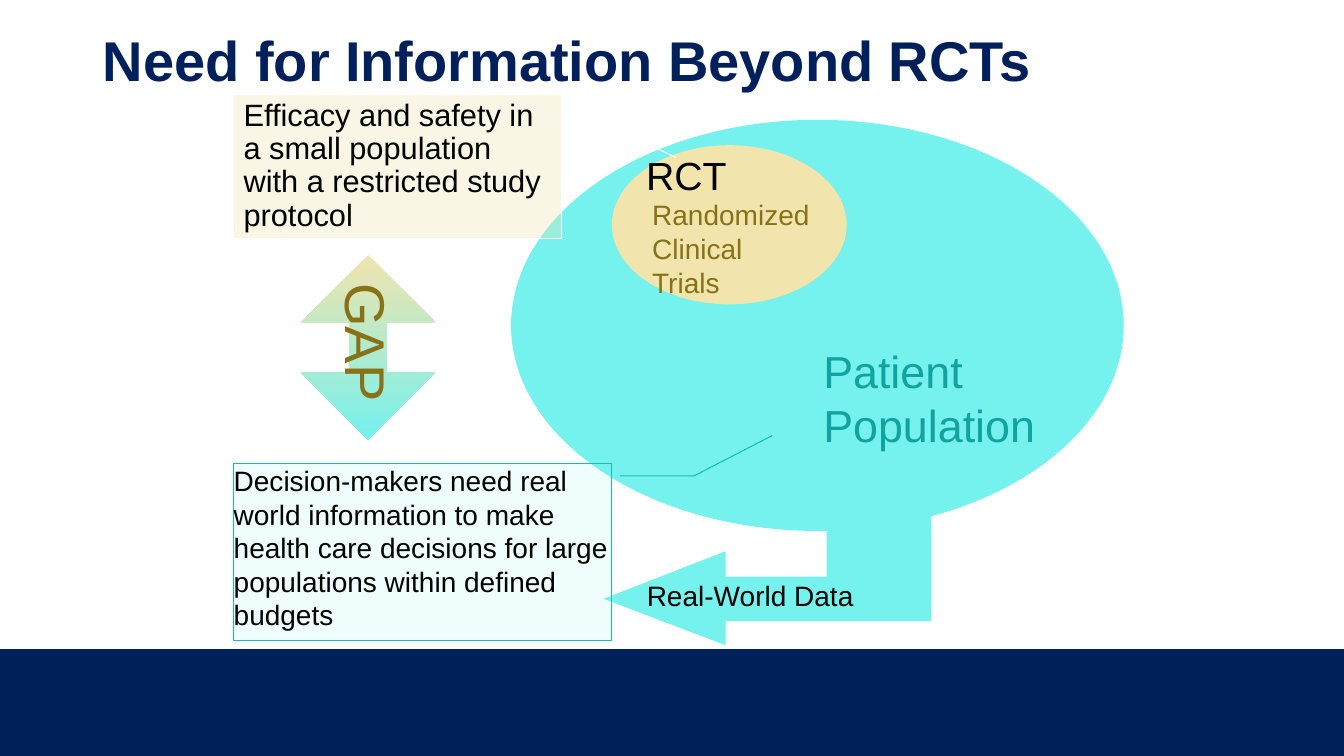
from lxml.etree import SubElement
from pptx import Presentation
from pptx.dml.color import RGBColor
from pptx.enum.shapes import MSO_SHAPE
from pptx.enum.text import MSO_ANCHOR, PP_ALIGN
from pptx.oxml.ns import qn
from pptx.util import Cm, Pt

NAVY, CYAN, SAND, OCHRE, TEAL, BLACK = "00205B", "75F1EE", "F1E4AD", "877217", "11A3A0", "000000"


def style(item, color):
    item.solid()
    item.fore_color.rgb = RGBColor.from_string(color)


def write(shape, text, size, color, spacing=1.0, wrap=True, anchor=MSO_ANCHOR.TOP):
    frame = shape.text_frame
    frame.text = text
    frame.word_wrap = wrap
    frame.vertical_anchor = anchor
    para = frame.paragraphs[0]
    para.alignment = PP_ALIGN.LEFT
    para.line_spacing = spacing
    span = para.runs[0]
    span.font.name = "Arial"
    span.font.size = Pt(size)
    style(span.font.fill, color)
    return para


deck = Presentation()
deck.slide_width, deck.slide_height = Cm(33.87), Cm(19.05)
page = deck.slides.add_slide(deck.slide_layouts[5])
shapes = page.shapes

title = shapes.title
title.left, title.top, title.width, title.height = Cm(2.34), Cm(0.69), Cm(29.21), Cm(1.8)
write(title, "Need for Information Beyond RCTs", 40, NAVY, 0.9, anchor=MSO_ANCHOR.MIDDLE)
title.text_frame.paragraphs[0].runs[0].font.bold = True

outline = shapes.build_freeform(1521, 1509, scale=Cm(0.01))
outline.add_line_segments([
    (1829, 1389), (1829, 1453), (2083, 1453), (2083, 1214),
    (2347, 1214), (2347, 1565), (1829, 1565), (1829, 1626),
])
data_arrow = outline.convert_to_shape()
footer = shapes.add_shape(MSO_SHAPE.RECTANGLE, 0, Cm(16.36), Cm(33.87), Cm(2.69))
population = shapes.add_shape(MSO_SHAPE.OVAL, Cm(12.88), Cm(3.02), Cm(15.44), Cm(10.36))
trials = shapes.add_shape(MSO_SHAPE.OVAL, Cm(15.42), Cm(3.66), Cm(5.92), Cm(4.01))
for shape, color in [(data_arrow, CYAN), (footer, NAVY), (population, CYAN), (trials, SAND)]:
    style(shape.fill, color)
    shape.line.fill.background()
    shape.shadow.inherit = False

para = write(trials, "RCT ", 28, BLACK, anchor=MSO_ANCHOR.MIDDLE)
span = para.add_run()
span.text = "Randomized Clinical Trials"
span.font.name = "Arial"
span.font.size = Pt(20)
style(span.font.fill, OCHRE)
properties = para._p.get_or_add_pPr()
properties.set("marL", str(Cm(0.15)))
properties.set("indent", str(-Cm(0.15)))

callouts = [
    ("Efficacy and safety in a small population with a restricted study protocol",
     (5.89, 2.39, 8.26, 3.63), (0.087, 1.026, 0.087, 1.026, 0.434, 1.348),
     SAND, 30, "FFFFFF", 22, 0.9),
    ("Decision-makers need real world information to make health care decisions "
     "for large populations within defined budgets",
     (5.89, 11.68, 9.53, 4.45), (0.071, 1.022, 0.071, 1.217, -0.158, 1.424),
     CYAN, 10, "13BDB9", 20, 1.0),
]
callout_boxes = []
for text, place, leader, color, opacity, edge, size, spacing in callouts:
    box = shapes.add_shape(MSO_SHAPE.LINE_CALLOUT_2, *map(Cm, place))
    for index, value in enumerate(leader):
        box.adjustments[index] = value
    style(box.fill, color)
    tint = box._element.xpath("p:spPr/a:solidFill/a:srgbClr")[0]
    SubElement(tint, qn("a:alpha")).set("val", str(opacity * 1000))
    style(box.line.fill, edge)
    box.line.width = Pt(0.75)
    box.shadow.inherit = False
    write(box, text, size, BLACK, spacing)
    callout_boxes.append(box)

for shape in (trials, callout_boxes[1]):
    frame = shape.text_frame
    frame.margin_left = frame.margin_top = frame.margin_right = frame.margin_bottom = 0

population_label = shapes.add_textbox(Cm(20.5), Cm(8.53), Cm(6.78), Cm(3))
write(population_label, "Patient Population", 32, TEAL)

gap = shapes.add_shape(MSO_SHAPE.UP_DOWN_ARROW, Cm(7.59), Cm(6.43), Cm(3.38), Cm(4.65))
gap.adjustments[0], gap.adjustments[1] = 0.5, 0.275
gap.fill.gradient()
gap.fill.gradient_angle = 270
for stop, position, color in zip(gap.fill.gradient_stops, (0, 1), (SAND, CYAN)):
    stop.position = position
    stop.color.rgb = RGBColor.from_string(color)
gap.line.fill.background()
gap.shadow.inherit = False
para = write(gap, "GAP", 40, OCHRE, wrap=False, anchor=MSO_ANCHOR.MIDDLE)
properties = para._p.get_or_add_pPr()
properties.set("marL", str(Cm(0.97)))
properties.set("indent", str(-Cm(0.97)))
gap.text_frame._txBody.bodyPr.set("vert", "eaVert")

data_label = shapes.add_textbox(Cm(16.05), Cm(14.45), Cm(5.77), Cm(1.12))
write(data_label, "Real-World Data", 20, BLACK, wrap=False)

deck.save("out.pptx")
